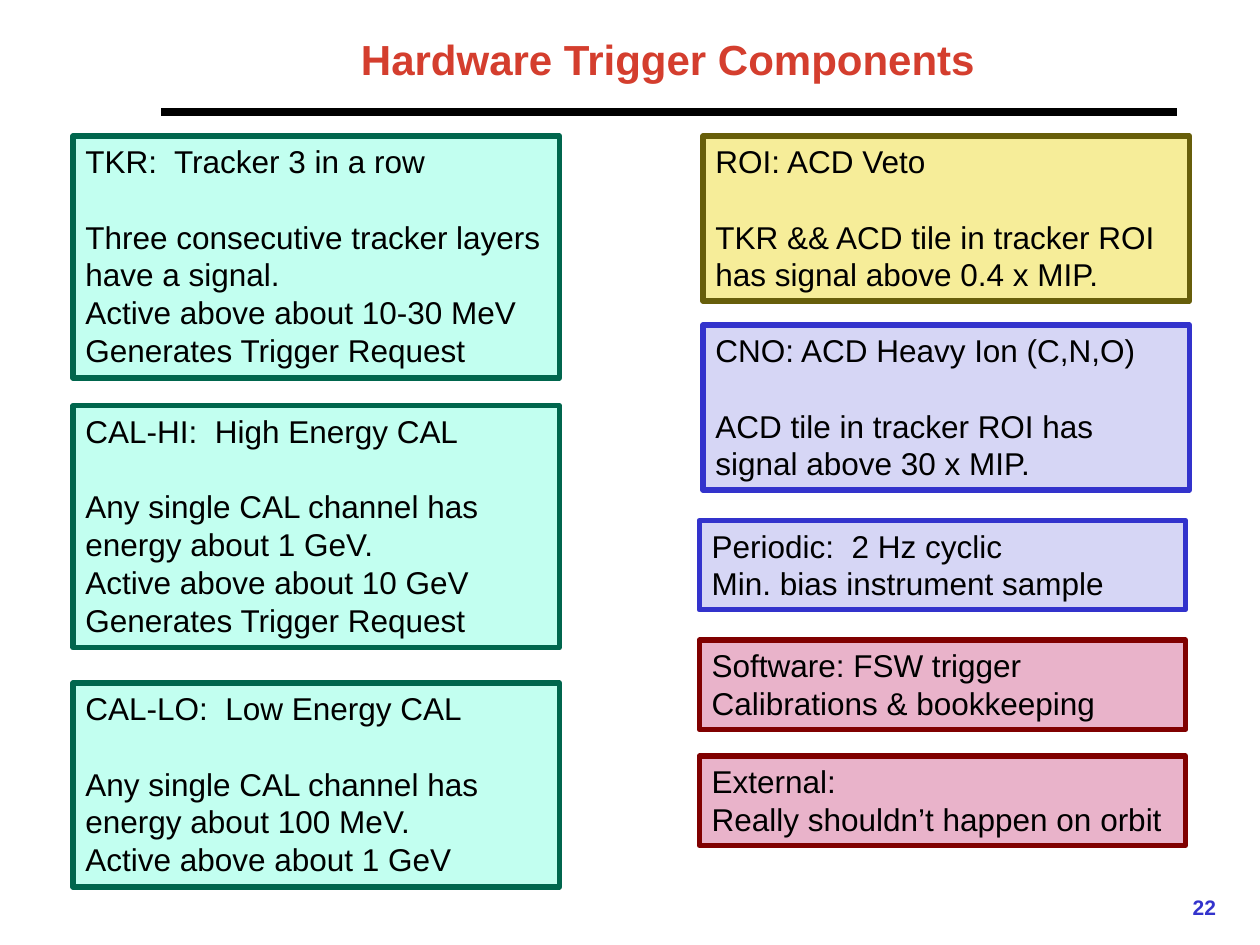
from lxml.etree import SubElement
from pptx import Presentation
from pptx.dml.color import RGBColor
from pptx.enum.shapes import MSO_CONNECTOR, MSO_SHAPE
from pptx.enum.text import MSO_ANCHOR, PP_ALIGN
from pptx.oxml.ns import qn
from pptx.util import Inches, Pt

FONT = "Arial"
COLORS = {
    "title": "D43E2E", "text": "000000", "number": "3333CC",
    "green_fill": "C2FFF0", "green_line": "00664D",
    "yellow_fill": "F6ED99", "yellow_line": "675E0A",
    "blue_fill": "D6D6F5", "blue_line": "3333CC",
    "red_fill": "E9B3CA", "red_line": "800000",
}
BOX_WIDTH = 3.86
HEADING_GAP = 21.5

# Each trigger: top, height, palette, heading, body lines, gap under heading
LEFT_TRIGGERS = [
    (1.08, 1.92, "green", "TKR:  Tracker 3 in a row",
     ["Three consecutive tracker layers", "have a signal.",
      "Active above about 10-30 MeV", "Generates Trigger Request"], HEADING_GAP),
    (3.22, 1.92, "green", "CAL-HI:  High Energy CAL",
     ["Any single CAL channel has energy about 1 GeV.",
      "Active above about 10 GeV", "Generates Trigger Request"], HEADING_GAP),
    (5.42, 1.62, "green", "CAL-LO:  Low Energy CAL",
     ["Any single CAL channel has energy about 100 MeV.",
      "Active above about 1 GeV"], HEADING_GAP),
]
VETO_TRIGGERS = [
    (1.08, 1.31, "yellow", "ROI: ACD Veto",
     ["TKR && ACD tile in tracker ROI has signal above 0.4 x MIP."], HEADING_GAP),
    (2.58, 1.31, "blue", "CNO: ACD Heavy Ion (C,N,O)",
     ["ACD tile in tracker ROI has", "signal above 30 x MIP."], HEADING_GAP),
]
OTHER_TRIGGERS = [
    (4.13, 0.71, "blue", "Periodic:  2 Hz cyclic",
     ["Min. bias instrument sample"], 0),
    (5.08, 0.71, "red", "Software: FSW trigger",
     ["Calibrations & bookkeeping"], 0),
    (6, 0.71, "red", "External:",
     ["Really shouldn’t happen on orbit"], 0),
]


def rgb(name):
    return RGBColor.from_string(COLORS[name])


def add_run(p, text, size, color, bold=False):
    r = p.add_run()
    r.text = text
    r.font.name = FONT
    r.font.size = Pt(size)
    r.font.bold = bold
    r.font.color.rgb = rgb(color)


def add_title(slide, left, top, width, height):
    sp = slide.shapes.title
    sp.left, sp.top, sp.width, sp.height = map(Inches, (left, top, width, height))
    tf = sp.text_frame
    tf.vertical_anchor = MSO_ANCHOR.MIDDLE
    p = tf.paragraphs[0]
    p.alignment = PP_ALIGN.CENTER
    add_run(p, "Hardware Trigger Components", 24, "title", bold=True)


def add_rule(slide, left, top, right):
    line = slide.shapes.add_connector(
        MSO_CONNECTOR.STRAIGHT, Inches(left), Inches(top), Inches(right), Inches(top))
    line.line.color.rgb = rgb("text")
    line.line.width = Pt(4.5)
    SubElement(line._element.spPr, qn("a:effectLst"))


def add_trigger_box(slide, left, top, width, height, palette, heading, body, gap):
    sp = slide.shapes.add_shape(
        MSO_SHAPE.RECTANGLE, Inches(left), Inches(top), Inches(width), Inches(height))
    sp.shadow.inherit = False
    sp.fill.solid()
    sp.fill.fore_color.rgb = rgb(f"{palette}_fill")
    sp.line.color.rgb = rgb(f"{palette}_line")
    sp.line.width = Pt(3)
    tf = sp.text_frame
    tf.word_wrap = True
    tf.vertical_anchor = MSO_ANCHOR.TOP
    for i, text in enumerate([heading, *body]):
        p = tf.add_paragraph() if i else tf.paragraphs[0]
        p.alignment = PP_ALIGN.LEFT
        if i == 1:
            p.space_before = Pt(gap)
        add_run(p, text, 18, "text")


def add_column(slide, left, triggers):
    for top, height, *content in triggers:
        add_trigger_box(slide, left, top, BOX_WIDTH, height, *content)


def add_page_number(slide, left, top, width, height):
    sp = slide.shapes.add_textbox(*map(Inches, (left, top, width, height)))
    tf = sp.text_frame
    tf.word_wrap = True
    tf.vertical_anchor = MSO_ANCHOR.MIDDLE
    p = tf.paragraphs[0]
    p.alignment = PP_ALIGN.RIGHT
    add_run(p, "22", 12, "number", bold=True)


def main():
    prs = Presentation()
    prs.slide_width, prs.slide_height = Inches(10), Inches(7.5)
    slide = prs.slides.add_slide(prs.slide_layouts[5])

    # Heading
    add_rule(slide, 1.28, 0.89, 9.34)
    add_title(slide, 1.24, 0.11, 8.12, 0.72)

    # Trigger boxes
    add_column(slide, 0.58, LEFT_TRIGGERS)
    add_column(slide, 5.58, VETO_TRIGGERS)
    add_column(slide, 5.55, OTHER_TRIGGERS)

    # Footer
    add_page_number(slide, 7.42, 7, 2.33, 0.4)
    prs.save("out.pptx")


if __name__ == "__main__":
    main()
